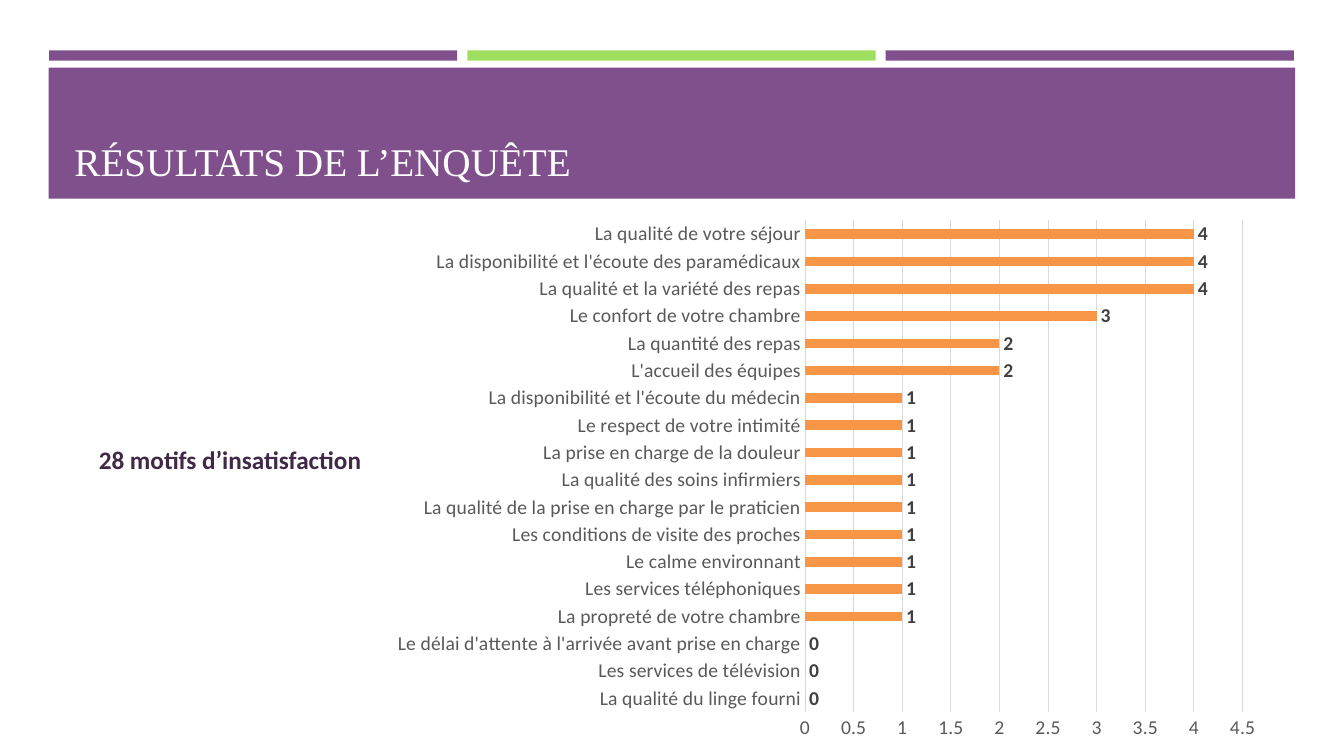
import pptx
import pptx.chart.data
import pptx.dml.color
import pptx.enum.chart
import pptx.enum.shapes
import pptx.enum.text
import pptx.util

Pt = pptx.util.Pt
ALIGN = pptx.enum.text.PP_ALIGN
ANCHOR = pptx.enum.text.MSO_ANCHOR
FIT = pptx.enum.text.MSO_AUTO_SIZE

COLOURS = {
    "purple": "7F508B",
    "green": "9FDF5F",
    "white": "FFFFFF",
    "plum": "402846",
    "orange": "F79646",
    "grid": "D9D9D9",
    "axis": "595959",
    "label": "404040",
    "black": "000000",
}

REASONS = [
    ("La qualité du linge fourni", 0),
    ("Les services de télévision", 0),
    ("Le délai d'attente à l'arrivée avant prise en charge", 0),
    ("La propreté de votre chambre", 1),
    ("Les services téléphoniques", 1),
    ("Le calme environnant", 1),
    ("Les conditions de visite des proches", 1),
    ("La qualité de la prise en charge par le praticien", 1),
    ("La qualité des soins infirmiers", 1),
    ("La prise en charge de la douleur", 1),
    ("Le respect de votre intimité", 1),
    ("La disponibilité et l'écoute du médecin", 1),
    ("L'accueil des équipes", 2),
    ("La quantité des repas", 2),
    ("Le confort de votre chambre", 3),
    ("La qualité et la variété des repas", 4),
    ("La disponibilité et l'écoute des paramédicaux", 4),
    ("La qualité de votre séjour", 4),
]


def colour(key):
    return pptx.dml.color.RGBColor.from_string(COLOURS[key])


def apply(target, values):
    for attribute, value in values.items():
        setattr(target, attribute, value)


class SlideBuilder:
    def __init__(self, slide, font="Calibri"):
        self.slide = slide
        self.font = font

    def style_font(self, font, size, key, bold=False, name=None):
        apply(font, {"name": name or self.font, "size": Pt(size), "bold": bold})
        font.color.rgb = colour(key)

    def style_line(self, line, key):
        line.color.rgb = colour(key)
        line.width = Pt(0.75)

    def bar(self, left, top, width, height, key):
        block = self.slide.shapes.add_shape(
            pptx.enum.shapes.MSO_SHAPE.RECTANGLE,
            Pt(left), Pt(top), Pt(width), Pt(height))
        block.shadow.inherit = False
        block.fill.solid()
        block.fill.fore_color.rgb = colour(key)
        block.line.fill.background()

    def set_text(self, shape, text, align, frame_format, **font_format):
        apply(shape.text_frame, {"text": text, "word_wrap": True, **frame_format})
        paragraph = shape.text_frame.paragraphs[0]
        paragraph.alignment = align
        self.style_font(paragraph.runs[0].font, **font_format)

    def title(self, text, left, top, width, height):
        heading = self.slide.shapes.title
        apply(heading, {"left": Pt(left), "top": Pt(top),
                        "width": Pt(width), "height": Pt(height)})
        heading.element.getparent().append(heading.element)
        self.set_text(heading, text, ALIGN.LEFT,
                      {"vertical_anchor": ANCHOR.BOTTOM, "auto_size": FIT.NONE},
                      size=28, key="white", name="Times New Roman")

    def caption(self, text, left, top, width, height):
        box = self.slide.shapes.add_textbox(Pt(left), Pt(top), Pt(width), Pt(height))
        self.set_text(box, text, ALIGN.CENTER,
                      {"auto_size": FIT.SHAPE_TO_FIT_TEXT},
                      size=18, key="plum", bold=True)

    def bar_chart(self, rows, left, top, width, height):
        data = pptx.chart.data.CategoryChartData()
        data.categories = [reason for reason, count in rows]
        data.add_series("Series 1", [count for reason, count in rows])
        chart = self.slide.shapes.add_chart(
            pptx.enum.chart.XL_CHART_TYPE.BAR_CLUSTERED,
            Pt(left), Pt(top), Pt(width), Pt(height), data).chart
        apply(chart, {"has_legend": False, "has_title": False})
        self.style_font(chart.font, 14, "black")

        reasons, counts = chart.category_axis, chart.value_axis
        for axis in (reasons, counts):
            apply(axis, {"major_tick_mark": pptx.enum.chart.XL_TICK_MARK.NONE,
                         "minor_tick_mark": pptx.enum.chart.XL_TICK_MARK.NONE})
            self.style_font(axis.tick_labels.font, 14, "axis")
        self.style_line(reasons.format.line, "grid")
        apply(counts, {"minimum_scale": 0, "maximum_scale": 4.5,
                       "major_unit": 0.5, "has_major_gridlines": True})
        counts.format.line.fill.background()
        self.style_line(counts.major_gridlines.format.line, "grid")

        plot = chart.plots[0]
        apply(plot, {"gap_width": 182, "vary_by_categories": False})
        series = plot.series[0]
        series.format.fill.solid()
        series.format.fill.fore_color.rgb = colour("orange")
        labels = series.data_labels
        apply(labels, {"show_value": True,
                       "position": pptx.enum.chart.XL_LABEL_POSITION.OUTSIDE_END})
        self.style_font(labels.font, 14, "label", bold=True)


def main():
    deck = pptx.Presentation()
    apply(deck, {"slide_width": Pt(960), "slide_height": Pt(540)})
    survey = SlideBuilder(deck.slides.add_slide(deck.slide_layouts[5]))
    for column, key in enumerate(("purple", "green", "purple")):
        survey.bar(35 + column * 298.8, 36, 291.6, 7.4, key)
    survey.bar(34.8, 48.3, 890.4, 93.6, "purple")
    survey.title("RÉSULTATS DE L’ENQUÊTE", 46, 55.4, 868, 80)
    survey.caption("28 motifs d’insatisfaction", 21, 314, 286.6, 29)
    survey.bar_chart(REASONS, 271.4, 149.8, 638, 386.6)
    deck.save("out.pptx")


if __name__ == "__main__":
    main()
